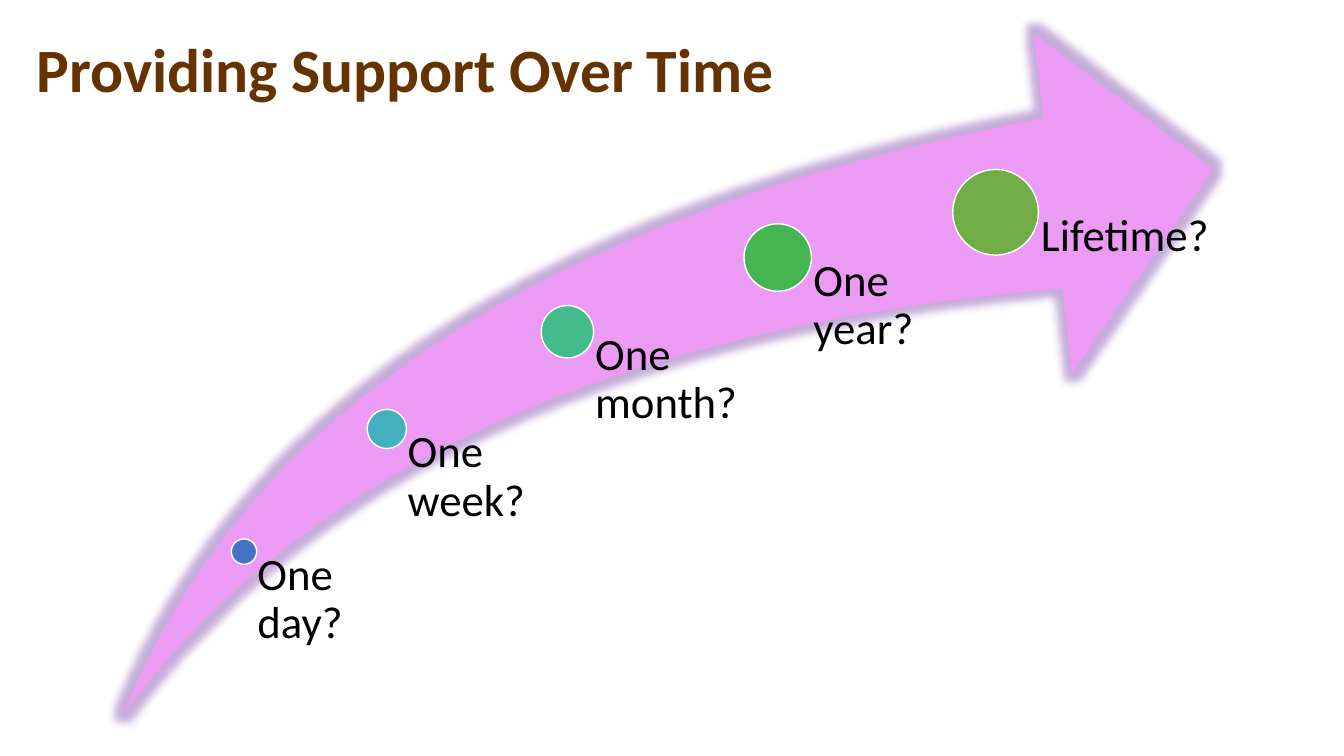
from lxml.etree import SubElement
from pptx import Presentation
from pptx.dml.color import RGBColor
from pptx.enum.shapes import MSO_SHAPE as Preset
from pptx.enum.text import MSO_ANCHOR as Anchor, MSO_AUTO_SIZE as AutoSize, PP_ALIGN as Align
from pptx.oxml.ns import qn
from pptx.util import Cm, Pt

TITLE = "Providing Support Over Time"
ARROW = (3.12, 0.84, 27.46, 17.15)
MILESTONES = [
    # text, centre x, centre y, diameter, label width, colour
    ("One day?", 6.15, 13.9, 0.64, 3.61, "4472C4"),
    ("One week?", 9.75, 10.81, 0.99, 4.55, "43AFC0"),
    ("One month?", 14.3, 8.36, 1.32, 5.31, "43BB8D"),
    ("One year?", 19.6, 6.49, 1.7, 5.49, "45B451"),
    ("Lifetime?", 25.09, 5.35, 2.16, 5.49, "70AD47"),
]
LABEL_BOTTOM = ARROW[1] + ARROW[3]
INSET_RATIO = 0.53


def color(value):
    return RGBColor.from_string(value)


def write(frame, text, size, ink, bold=False):
    frame.text = text
    frame.word_wrap = True
    frame.auto_size = AutoSize.NONE
    para = frame.paragraphs[0]
    para.alignment = Align.LEFT
    para.line_spacing = 0.9
    font = para.runs[0].font
    font.name = "Calibri"
    font.size = Pt(size)
    font.bold = bold
    font.color.rgb = color(ink)


def add_preset(page, preset, place, fill):
    shape = page.shapes.add_shape(preset, *map(Cm, place))
    shape.shadow.inherit = False
    shape.fill.solid()
    shape.fill.fore_color.rgb = color(fill)
    return shape


def add_glow(shape, radius, tint, alpha):
    effects = shape.element.spPr.find(qn("a:effectLst"))
    glow = SubElement(effects, qn("a:glow"), rad=str(Pt(radius)))
    shade = SubElement(glow, qn("a:srgbClr"), val=tint)
    SubElement(shade, qn("a:alpha"), val=str(alpha * 1000))


def add_arrow(page):
    arrow = add_preset(page, Preset.SWOOSH_ARROW, ARROW, "EB9BF3")
    arrow.adjustments[0] = 0.25
    arrow.adjustments[1] = 0.25
    arrow.line.fill.background()
    add_glow(arrow, 11, "7030A0", 40)


def add_milestone(page, text, x, y, diameter, width, fill):
    corner = (x - diameter / 2, y - diameter / 2)
    dot = add_preset(page, Preset.OVAL, (*corner, diameter, diameter), fill)
    dot.line.color.rgb = color("FFFFFF")
    dot.line.width = Pt(1)
    box = page.shapes.add_textbox(Cm(x), Cm(y), Cm(width), Cm(LABEL_BOTTOM - y))
    frame = box.text_frame
    frame.margin_left = Cm(diameter * INSET_RATIO)
    frame.margin_top = frame.margin_right = frame.margin_bottom = 0
    frame.vertical_anchor = Anchor.TOP
    write(frame, text, 32, "000000")


def main():
    deck = Presentation()
    deck.slide_width, deck.slide_height = Cm(33.87), Cm(19.05)
    page = deck.slides.add_slide(deck.slide_layouts[5])
    title = page.shapes.title
    title.left, title.top, title.width, title.height = map(Cm, (0.66, 0, 30.84, 3.68))
    title.text_frame.vertical_anchor = Anchor.MIDDLE
    write(title.text_frame, TITLE, 44, "663300", bold=True)
    add_arrow(page)
    for milestone in MILESTONES:
        add_milestone(page, *milestone)
    deck.save("out.pptx")


if __name__ == "__main__":
    main()
